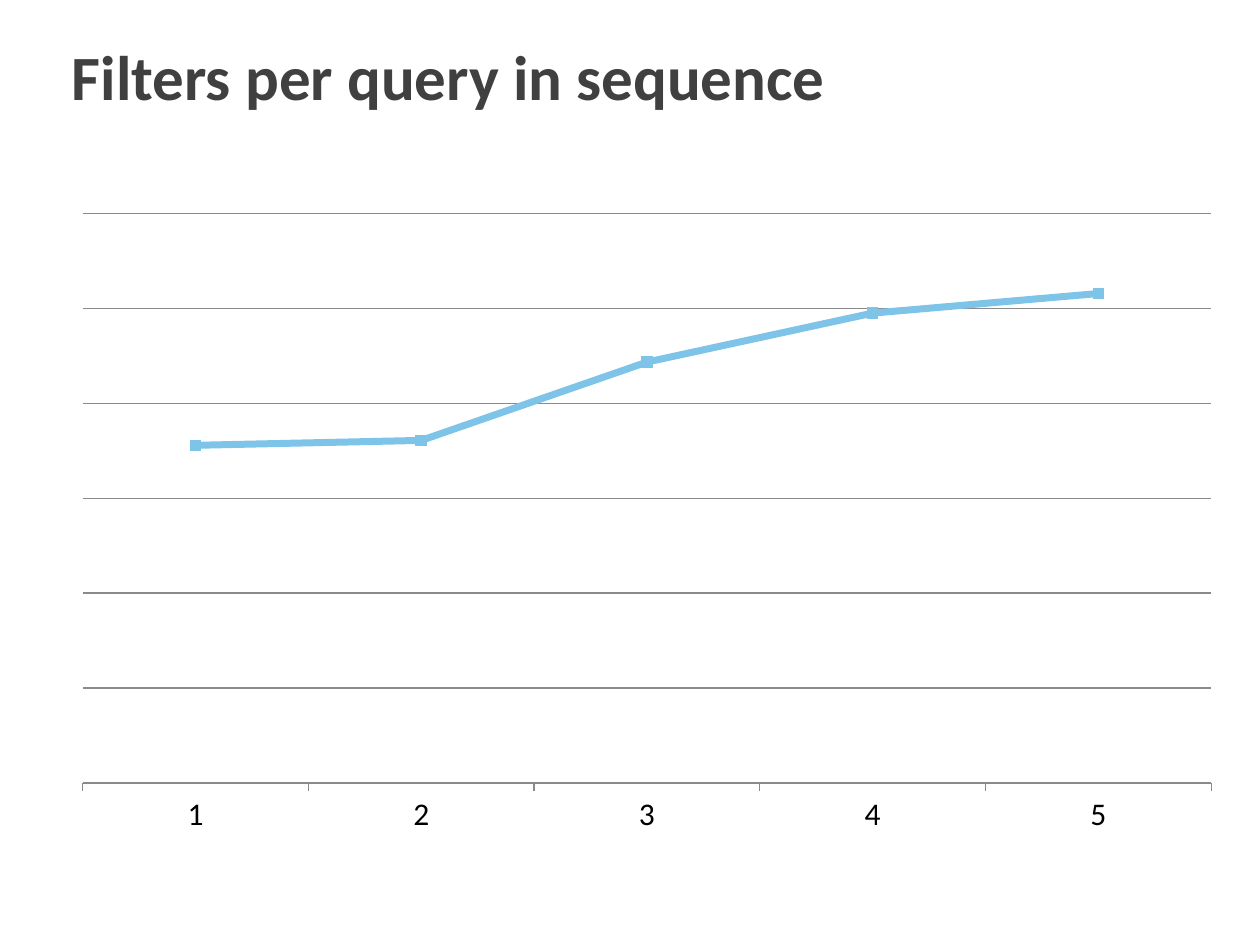
from typing import NamedTuple

import pptx
import pptx.chart.data
import pptx.dml.color
import pptx.enum.chart
import pptx.enum.text
import pptx.util
from lxml import etree

FONT = "Calibri"
COLORS = {"title": "404040", "labels": "000000", "grid": "8A8A8A", "line": "7DC4E8"}
GRID_STEP = 19.4
GRID_ROWS = 6
FILTERS_PER_QUERY = {"1": 69, "2": 70, "3": 86, "4": 96, "5": 100}


class Area(NamedTuple):
    """Inches on the slide, or shares of the chart for its plot area."""
    left: float
    top: float
    width: float
    height: float


TITLE_AREA = Area(0.47, 0.21, 9.33, 0.77)
CHART_AREA = Area(0.47, 1.59, 9.33, 5.14)
PLOT_SHARES = Area(0.02, 0.02, 0.96, 0.88)


def rgb(name: str) -> pptx.dml.color.RGBColor:
    return pptx.dml.color.RGBColor.from_string(COLORS[name])


def format_font(font, *, size: float, color: str, bold: bool = False) -> None:
    font.name = FONT
    font.size = pptx.util.Pt(size)
    font.bold = bold
    font.color.rgb = rgb(color)


def write_text(shape, text: str, **font_format) -> None:
    frame = shape.text_frame
    frame.word_wrap = True
    frame.vertical_anchor = pptx.enum.text.MSO_ANCHOR.MIDDLE
    paragraph = frame.paragraphs[0]
    paragraph.alignment = pptx.enum.text.PP_ALIGN.LEFT
    run = paragraph.add_run()
    run.text = text
    format_font(run.font, **font_format)


def format_line(line, color: str, width: float) -> None:
    line.color.rgb = rgb(color)
    line.width = pptx.util.Pt(width)


def fix_plot_area(chart, shares: Area) -> None:
    """Pin the inner plot area to the given shares of the chart."""
    plot_area = chart.plots[0]._element.getparent()
    namespace = etree.QName(plot_area).namespace
    for old_layout in plot_area.findall(f"{{{namespace}}}layout"):
        plot_area.remove(old_layout)
    layout = etree.Element(f"{{{namespace}}}layout")
    manual = etree.SubElement(layout, f"{{{namespace}}}manualLayout")
    settings = [("layoutTarget", "inner"), ("xMode", "edge"), ("yMode", "edge")]
    settings += zip("xywh", shares)
    for tag, value in settings:
        etree.SubElement(manual, f"{{{namespace}}}{tag}").set("val", str(value))
    plot_area.insert(0, layout)


def add_filter_chart(slide, area: Area) -> None:
    data = pptx.chart.data.CategoryChartData()
    data.categories = list(FILTERS_PER_QUERY)
    data.add_series("Series 1", list(FILTERS_PER_QUERY.values()))
    chart = slide.shapes.add_chart(
        pptx.enum.chart.XL_CHART_TYPE.LINE_MARKERS, *map(pptx.util.Inches, area), data
    ).chart
    chart.has_title = False
    chart.has_legend = False
    format_font(chart.font, size=18, color="labels")
    fix_plot_area(chart, PLOT_SHARES)

    queries = chart.category_axis
    queries.major_tick_mark = pptx.enum.chart.XL_TICK_MARK.OUTSIDE
    format_line(queries.format.line, "grid", 0.75)

    filters = chart.value_axis
    filters.visible = False
    filters.minimum_scale = 0
    filters.maximum_scale = GRID_STEP * GRID_ROWS
    filters.major_unit = GRID_STEP
    filters.has_major_gridlines = True
    format_line(filters.major_gridlines.format.line, "grid", 0.75)

    chart.plots[0].vary_by_categories = False
    trend = chart.plots[0].series[0]
    trend.smooth = False
    format_line(trend.format.line, "line", 4)
    trend.marker.style = pptx.enum.chart.XL_MARKER_STYLE.SQUARE
    trend.marker.size = 6
    trend.marker.format.fill.solid()
    trend.marker.format.fill.fore_color.rgb = rgb("line")
    trend.marker.format.line.fill.background()


def main() -> None:
    deck = pptx.Presentation()
    deck.slide_width = pptx.util.Inches(10)
    deck.slide_height = pptx.util.Inches(7.5)
    slide = deck.slides.add_slide(deck.slide_layouts.get_by_name("Title Only"))
    title = slide.shapes.title
    title.left, title.top, title.width, title.height = map(pptx.util.Inches, TITLE_AREA)
    write_text(title, "Filters per query in sequence", size=36, color="title", bold=True)
    add_filter_chart(slide, CHART_AREA)
    deck.save("out.pptx")


if __name__ == "__main__":
    main()
